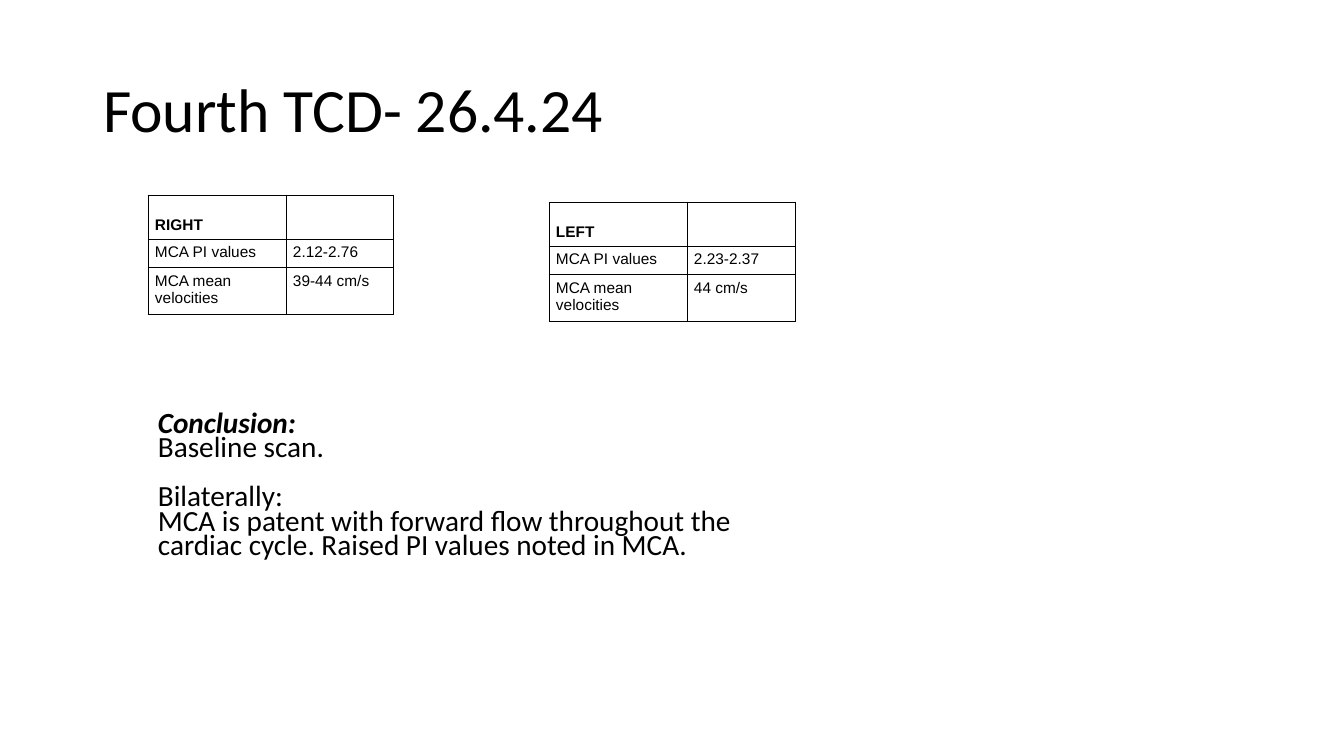
from lxml import etree
from pptx import Presentation
from pptx.dml.color import RGBColor
from pptx.enum.text import MSO_ANCHOR, PP_ALIGN
from pptx.oxml.ns import qn
from pptx.util import Pt

TOP, MIDDLE, BOTTOM = MSO_ANCHOR.TOP, MSO_ANCHOR.MIDDLE, MSO_ANCHOR.BOTTOM
LEFT = PP_ALIGN.LEFT
TITLE_ONLY = 5
EMU_PER_PX = 914400 / 100.8
COLORS = {"ink": "000000", "paper": "FFFFFF"}
COLUMN_WIDTHS = (138, 108)
ROW_HEIGHTS = (44, 27, 45)
CELL_FORMAT = {"margin_left": 7, "margin_right": 7, "margin_top": 5, "margin_bottom": 5}
TITLE_FONT = {"name": "Calibri", "size": Pt(44)}
BODY_FONT = {"name": "Calibri", "size": Pt(20.9)}
TABLE_FONT = {"name": "Arial", "size": Pt(11)}


def px(length):
    """Turn a length in px into EMU."""
    return round(length * EMU_PER_PX)


def apply_format(target, values):
    """Set each named attribute on the target."""
    for name, value in values.items():
        setattr(target, name, value)


def write_paragraph(paragraph, text, font, **paragraph_format):
    """Fill a paragraph with one formatted run."""
    apply_format(paragraph, {"alignment": LEFT, **paragraph_format})
    run = paragraph.add_run()
    run.text = text
    apply_format(run.font, font)
    run.font.color.rgb = RGBColor.from_string(COLORS["ink"])


def add_borders(cell):
    """Draw a thin line on all four sides of a cell."""
    properties = cell._tc.get_or_add_tcPr()
    for index, side in enumerate(("lnL", "lnR", "lnT", "lnB")):
        line = etree.Element(qn(f"a:{side}"), w=str(Pt(0.75)))
        fill = etree.SubElement(line, qn("a:solidFill"))
        etree.SubElement(fill, qn("a:srgbClr"), val=COLORS["ink"])
        properties.insert(index, line)


def add_title(slide, box, text):
    """Place and fill the title placeholder."""
    title = slide.shapes.title
    apply_format(title, dict(zip(("left", "top", "width", "height"), map(px, box))))
    title.text_frame.vertical_anchor = MIDDLE
    write_paragraph(title.text_frame.paragraphs[0], text, TITLE_FONT, line_spacing=0.9)


def add_conclusion(slide, box):
    """Write the heading and the findings in one text box."""
    frame = slide.shapes.add_textbox(*map(px, box)).text_frame
    apply_format(frame, {"word_wrap": True, "vertical_anchor": MIDDLE})
    lines = (
        ("Conclusion:", {"bold": True, "italic": True}, 0),
        ("Baseline scan.", {}, 0),
        ("Bilaterally:", {}, 17.5),
        ("MCA is patent with forward flow throughout the cardiac cycle. "
         "Raised PI values noted in MCA.", {}, 0),
    )
    for index, (text, emphasis, gap) in enumerate(lines):
        paragraph = frame.add_paragraph() if index else frame.paragraphs[0]
        write_paragraph(paragraph, text, {**BODY_FONT, **emphasis},
                        line_spacing=0.7, space_before=Pt(gap))


def add_side_table(slide, left, top, side, pulsatility, velocity):
    """Tabulate the MCA readings of one side."""
    rows = ((side, ""), ("MCA PI values", pulsatility), ("MCA mean velocities", velocity))
    table = slide.shapes.add_table(
        len(rows), len(COLUMN_WIDTHS), px(left), px(top),
        px(sum(COLUMN_WIDTHS)), px(sum(ROW_HEIGHTS))).table
    apply_format(table, {"first_row": False, "horz_banding": False})
    for column, width in zip(table.columns, COLUMN_WIDTHS):
        column.width = px(width)
    for row_index, (texts, height) in enumerate(zip(rows, ROW_HEIGHTS)):
        table.rows[row_index].height = px(height)
        for column_index, text in enumerate(texts):
            cell = table.cell(row_index, column_index)
            apply_format(cell, {name: px(value) for name, value in CELL_FORMAT.items()})
            cell.vertical_anchor = TOP if row_index else BOTTOM
            cell.fill.solid()
            cell.fill.fore_color.rgb = RGBColor.from_string(COLORS["paper"])
            add_borders(cell)
            if text:
                write_paragraph(cell.text_frame.paragraphs[0], text,
                                {**TABLE_FONT, "bold": row_index == 0})


def main():
    """Build and save the slide."""
    presentation = Presentation()
    apply_format(presentation, {"slide_width": px(1344), "slide_height": px(756)})
    slide = presentation.slides.add_slide(presentation.slide_layouts[TITLE_ONLY])
    add_title(slide, (93, 40, 1159, 146), "Fourth TCD- 26.4.24")
    add_conclusion(slide, (148, 395, 643, 184))
    add_side_table(slide, 148, 195, "RIGHT", "2.12-2.76", "39-44 cm/s")
    add_side_table(slide, 549, 202, "LEFT", "2.23-2.37", "44 cm/s")
    presentation.save("out.pptx")


if __name__ == "__main__":
    main()
